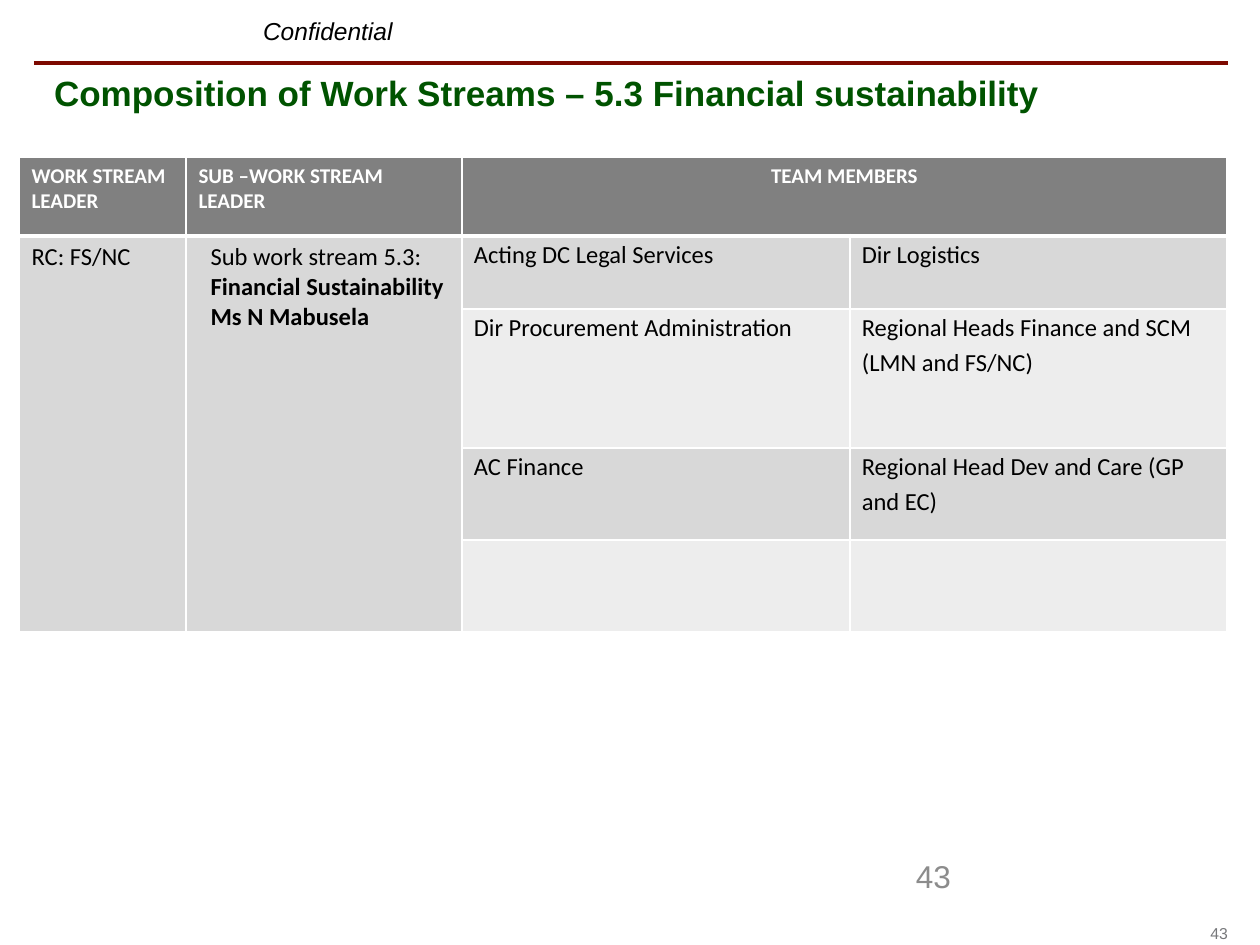
from dataclasses import dataclass

from lxml import etree
from pptx import Presentation
from pptx import util as u
from pptx.dml.color import RGBColor
from pptx.enum import shapes, text
from pptx.oxml.ns import qn

PX = 914400 / 126


@dataclass(frozen=True)
class Theme:
    heading_font: str = "Arial"
    table_font: str = "Calibri"
    rule: str = "7D0900"
    title: str = "005300"
    ink: str = "000000"
    white: str = "FFFFFF"
    header_fill: str = "808080"
    dark_band: str = "D8D8D8"
    light_band: str = "EDEDED"
    small_number: str = "77787B"
    large_number: str = "8C8C8C"
    title_size: int = 20
    number_size: int = 18
    body_size: int = 14
    header_size: int = 12
    small_size: int = 9


THEME = Theme()
ALIGN = text.PP_ALIGN

COLUMNS = [167, 276, 388, 377]
ROWS = [79, 73, 139, 92, 92]
HEADERS = ["WORK STREAM LEADER", "SUB –WORK STREAM LEADER", "TEAM MEMBERS"]
MEMBERS = [
    ("Acting DC Legal Services", "Dir Logistics"),
    ("Dir Procurement Administration",
     "Regional Heads Finance and SCM (LMN and FS/NC)"),
    ("AC Finance", "Regional Head Dev and Care (GP and EC)"),
]


def px(length):
    return u.Emu(round(length * PX))


def add_span(para, words, size, color, font, bold=False, italic=False):
    span = para.add_run()
    span.text = words
    span.font.name = font
    span.font.size = u.Pt(size)
    span.font.bold = bold
    span.font.italic = italic
    span.font.color.rgb = RGBColor.from_string(color)


def set_insets(frame, x, y):
    frame.margin_left = frame.margin_right = px(x)
    frame.margin_top = frame.margin_bottom = px(y)


def add_label(page, words, place, size, color, insets, align=ALIGN.LEFT,
              anchor=text.MSO_ANCHOR.TOP, italic=False):
    box = page.shapes.add_textbox(*map(px, place))
    frame = box.text_frame
    frame.word_wrap = True
    frame.vertical_anchor = anchor
    set_insets(frame, *insets)
    para = frame.paragraphs[0]
    para.alignment = align
    add_span(para, words, size, color, THEME.heading_font, italic=italic)


def add_rule(page, left, right, y):
    rule = page.shapes.add_connector(
        shapes.MSO_CONNECTOR.STRAIGHT, px(left), px(y), px(right), px(y))
    rule.line.color.rgb = RGBColor.from_string(THEME.rule)
    rule.line.width = u.Pt(2.25)
    etree.SubElement(rule._element.spPr, qn("a:effectLst"))


def set_title(page, words):
    title = page.shapes.title
    title.left, title.top, title.width, title.height = map(px, (54, 76, 1154, 102))
    frame = title.text_frame
    frame.word_wrap = True
    frame.auto_size = text.MSO_AUTO_SIZE.NONE
    frame.vertical_anchor = text.MSO_ANCHOR.TOP
    set_insets(frame, 0, 0)
    para = frame.paragraphs[0]
    para.alignment = ALIGN.LEFT
    para.line_spacing = 0.9
    add_span(para, words, THEME.title_size, THEME.title,
             THEME.heading_font, bold=True)


def set_borders(cell, top, bottom):
    """Draw white borders; left and right are always 1 pt."""
    properties = cell._tc.get_or_add_tcPr()
    widths = {"lnL": 1, "lnR": 1, "lnT": top, "lnB": bottom}
    for index, (side, width) in enumerate(widths.items()):
        line = etree.Element(qn("a:" + side), w=str(u.Pt(width)))
        fill = etree.SubElement(line, qn("a:solidFill"))
        etree.SubElement(fill, qn("a:srgbClr"), val=THEME.white)
        properties.insert(index, line)


def style_cell(cell, row):
    band = THEME.dark_band if row % 2 else THEME.light_band
    cell.fill.solid()
    cell.fill.fore_color.rgb = RGBColor.from_string(
        band if row else THEME.header_fill)
    set_borders(cell, top=3 if row == 1 else 1, bottom=1 if row else 3)


def indent(para, left):
    properties = para._p.get_or_add_pPr()
    properties.set("marL", str(px(left)))
    properties.set("indent", "0")


def add_body(para, words, bold=False):
    add_span(para, words, THEME.body_size, THEME.ink, THEME.table_font, bold)


def fill_header(table):
    for column, words in enumerate(HEADERS):
        para = table.cell(0, column).text_frame.paragraphs[0]
        para.alignment = ALIGN.CENTER if column == 2 else ALIGN.LEFT
        add_span(para, words, THEME.header_size, THEME.white,
                 THEME.table_font, bold=True)


def fill_leaders(table):
    add_body(table.cell(1, 0).text_frame.paragraphs[0], "RC: FS/NC")
    frame = table.cell(1, 1).text_frame
    stream, leader = frame.paragraphs[0], frame.add_paragraph()
    for para in (stream, leader):
        indent(para, 12)
    add_body(stream, "Sub work stream 5.3: ")
    add_body(stream, "Financial Sustainability", bold=True)
    add_body(leader, "Ms N Mabusela", bold=True)


def fill_members(table):
    for row, pair in enumerate(MEMBERS, start=1):
        for column, words in enumerate(pair, start=2):
            cell = table.cell(row, column)
            set_insets(cell, 9, 0)
            para = cell.text_frame.paragraphs[0]
            indent(para, 3)
            para.line_spacing = 1.15
            add_body(para, words)


def add_team_table(page):
    frame = page.shapes.add_table(
        len(ROWS), len(COLUMNS), px(19), px(157), px(sum(COLUMNS)), px(sum(ROWS)))
    table = frame.table
    table.horz_banding = False
    for column, width in zip(table.columns, COLUMNS):
        column.width = px(width)
    for index, (row, height) in enumerate(zip(table.rows, ROWS)):
        row.height = px(height)
        for number, cell in enumerate(row.cells):
            style_cell(cell, index if number > 1 else min(index, 1))
    table.cell(0, 2).merge(table.cell(0, 3))
    for column in (0, 1):
        table.cell(1, column).merge(table.cell(len(ROWS) - 1, column))
    fill_header(table)
    fill_leaders(table)
    fill_members(table)


def main():
    deck = Presentation()
    deck.slide_width, deck.slide_height = px(1260), px(945)
    page = deck.slides.add_slide(deck.slide_layouts[5])
    add_rule(page, 34, 1228, 63)
    add_label(page, "43", (1192, 924, 36, 19), THEME.small_size,
              THEME.small_number, (0, 0), ALIGN.RIGHT, text.MSO_ANCHOR.MIDDLE)
    add_label(page, "Confidential", (253, 6, 232, 49), THEME.body_size,
              THEME.ink, (10, 10), italic=True)
    set_title(page, "Composition of Work Streams – 5.3 Financial sustainability")
    add_team_table(page)
    add_label(page, "43", (903, 851, 294, 50), THEME.number_size,
              THEME.large_number, (13, 6))
    deck.save("out.pptx")


if __name__ == "__main__":
    main()
